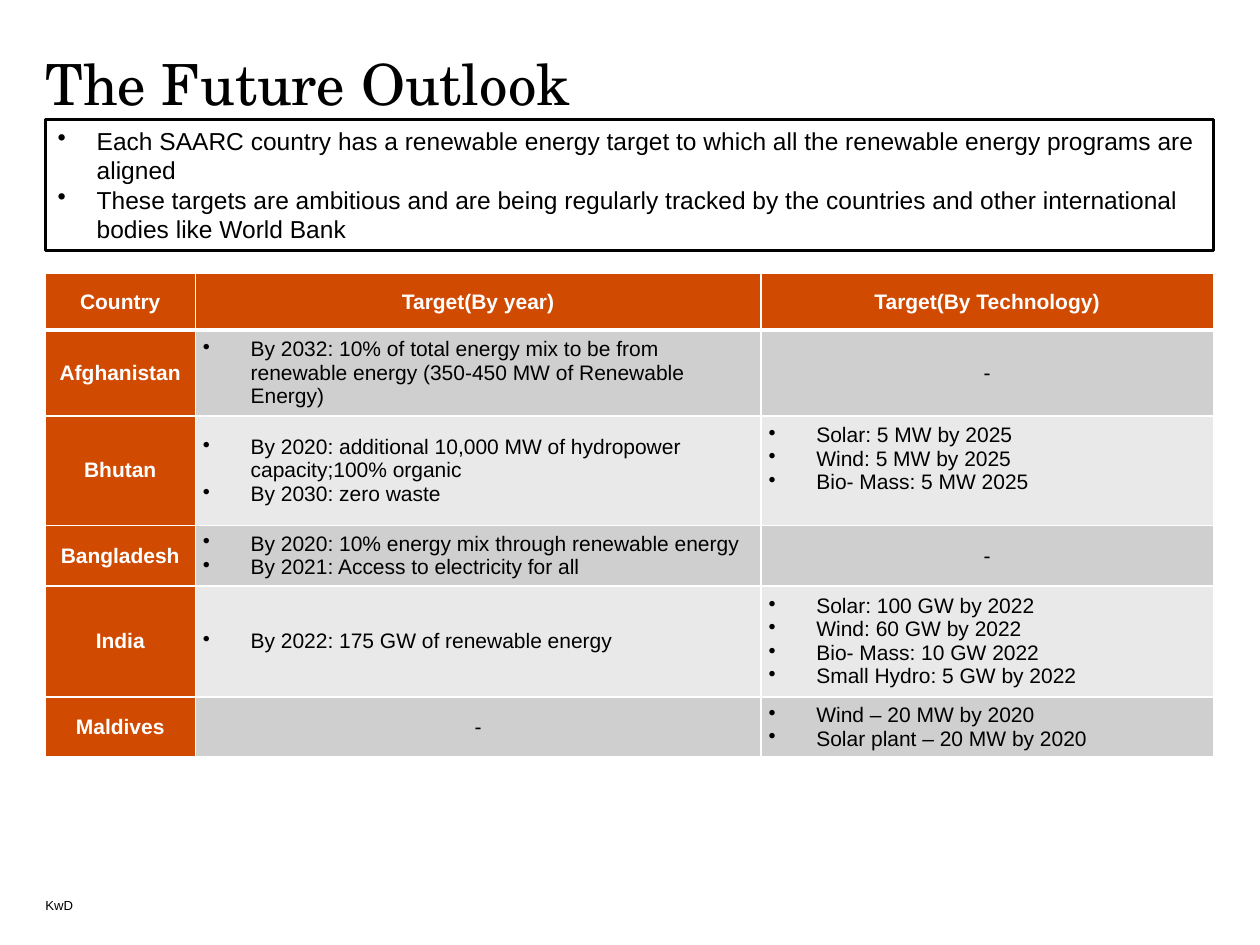
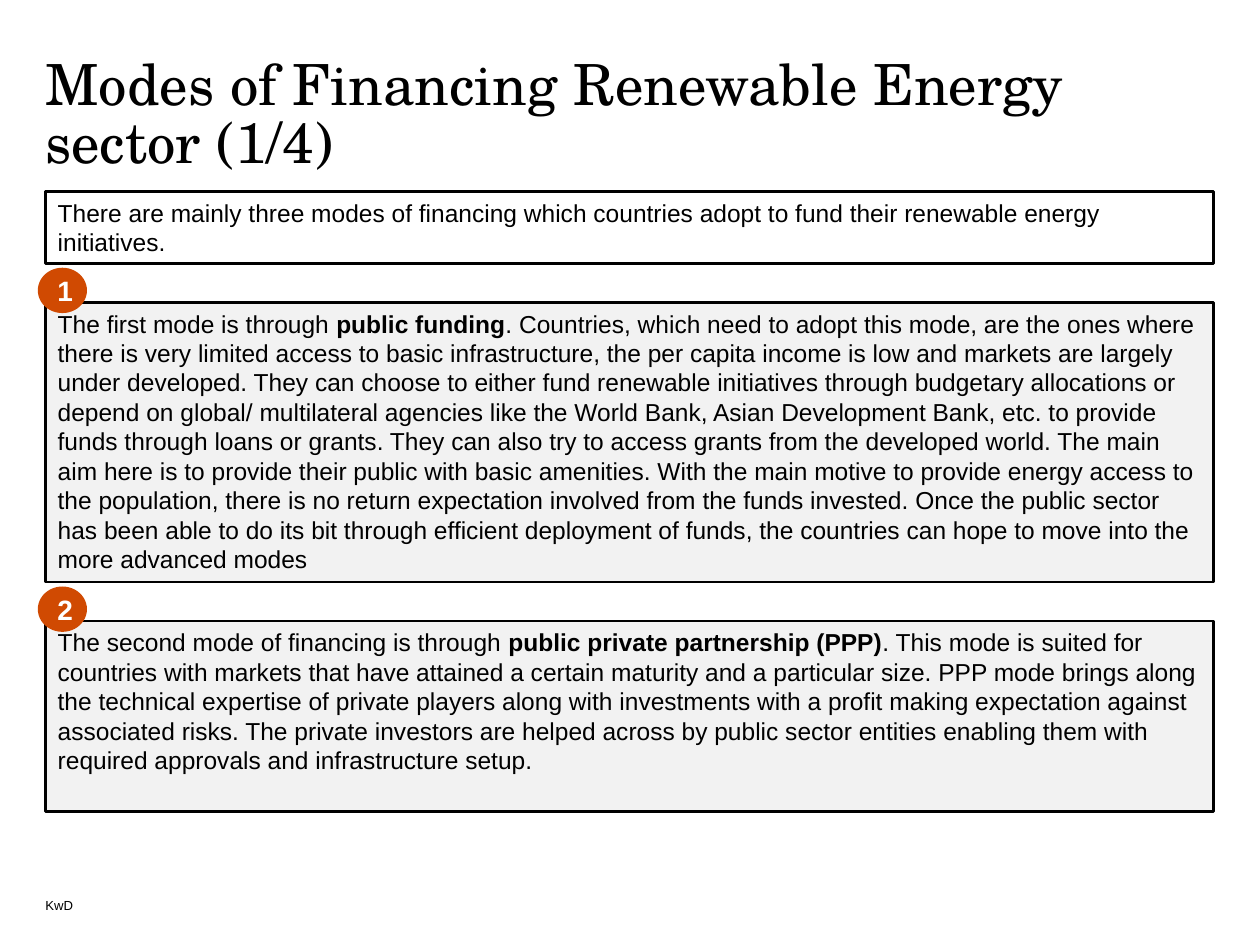
import pptx
import pptx.util
import pptx.dml.color
import pptx.enum.shapes
import pptx.enum.text
import pptx.oxml.ns
import lxml.etree

ORANGE, BLACK, WHITE = "D04A02", "000000", "FFFFFF"
PANEL_GREY, DARK_BAND, LIGHT_BAND = "F2F2F2", "CFCFCF", "E9E9E9"
CENTER = pptx.enum.text.PP_ALIGN.CENTER
LEFT = pptx.enum.text.PP_ALIGN.LEFT
MIDDLE = pptx.enum.text.MSO_ANCHOR.MIDDLE
TOP = pptx.enum.text.MSO_ANCHOR.TOP
BOTTOM = pptx.enum.text.MSO_ANCHOR.BOTTOM
SHAPES = pptx.enum.shapes.MSO_SHAPE

deck = pptx.Presentation()
deck.slide_width = pptx.util.Inches(10)
deck.slide_height = pptx.util.Inches(7.5)
column = deck.slide_width / 100
row = deck.slide_height / 75
margin, content_width = 3.6, 92.7


def paint(color):
    return pptx.dml.color.RGBColor.from_string(color)


def write(frame, lines, size, color=BLACK, font="Arial", bold=False, align=LEFT, hang=0):
    frame.word_wrap = True
    for index, line in enumerate(lines):
        para = frame.paragraphs[0] if index == 0 else frame.add_paragraph()
        para.alignment = align
        if hang:
            properties = para._p.get_or_add_pPr()
            properties.set("marL", str(int(hang * column)))
            properties.set("indent", str(int(-hang * column)))
            bullet = lxml.etree.SubElement(properties, pptx.oxml.ns.qn("a:buChar"))
            bullet.set("char", "•")
        para.font.size = pptx.util.Pt(size)
        para.font.name = font
        para.font.color.rgb = paint(color)
        if bold:
            para.font.bold = True
        for part, words in enumerate(line.split("|")):
            span = para.add_run()
            span.text = words
            if part % 2:
                span.font.bold = True


pages = []
for title in ["The Future Outlook", "Modes of Financing Renewable Energy sector (1/4)"]:
    page = deck.slides.add_slide(deck.slide_layouts[6])
    pages.append(page)
    for text, top, width, height, size, font, anchor in [
        ("KwD", 71, 44.9, 1.5, 7.5, "Arial", BOTTOM),
        (title, 4.7, content_width, 6.8, 32.4, "TeX Gyre Schola", TOP),
    ]:
        box = page.shapes.add_textbox(
            int(margin * column), int(top * row), int(width * column), int(height * row))
        frame = box.text_frame
        frame.margin_left = frame.margin_right = frame.margin_top = frame.margin_bottom = 0
        frame.vertical_anchor = anchor
        write(frame, [text], size, font=font)
    frame.paragraphs[0].line_spacing = 0.85

outlook, financing = pages
targets_intro = [
    "Each SAARC country has a renewable energy target to which all the renewable energy "
    "programs are aligned",
    "These targets are ambitious and are being regularly tracked by the countries and other "
    "international bodies like World Bank",
]
modes_intro = [
    "There are mainly three modes of financing which countries adopt to fund their renewable "
    "energy initiatives."
]
public_funding = [
    "The first mode is through |public funding|. Countries, which need to adopt this mode, are "
    "the ones where there is very limited access to basic infrastructure, the per capita income "
    "is low and markets are largely under developed.",
    "They can choose to either fund renewable initiatives through budgetary allocations or "
    "depend on global/ multilateral agencies like the World Bank, Asian Development Bank, etc. "
    "to provide funds through loans or grants.",
    "They can also try to access grants from the developed world.",
    "The main aim here is to provide their public with basic amenities.",
    "With the main motive to provide energy access to the population, there is no return "
    "expectation involved from the funds invested.",
    "Once the public sector has been able to do its bit through efficient deployment of funds, "
    "the countries can hope to move into the more advanced modes",
]
partnership = [
    "The second mode of financing is through |public private partnership (PPP)|. This mode is "
    "suited for countries with markets that have attained a certain maturity and a particular "
    "size.",
    "PPP mode brings along the technical expertise of private players along with investments "
    "with a profit making expectation against associated risks.",
    "The private investors are helped across by public sector entities enabling them with "
    "required approvals and infrastructure setup.",
]

for page, top, height, lines, hang, number in [
    (outlook, 9.5, 10.4, targets_intro, 3.1, None),
    (financing, 15.2, 5.7, modes_intro, 0, None),
    (financing, 24, 22.2, [" ".join(public_funding)], 0, "1"),
    (financing, 49.3, 15.1, [" ".join(partnership)], 0, "2"),
]:
    panel = page.shapes.add_shape(
        SHAPES.RECTANGLE, int(margin * column), int(top * row),
        int(content_width * column), int(height * row))
    panel.shadow.inherit = False
    panel.line.color.rgb = paint(BLACK)
    panel.line.width = pptx.util.Pt(1.5)
    panel.text_frame.vertical_anchor = TOP
    write(panel.text_frame, lines, 14, hang=hang)
    if number is None:
        panel.fill.background()
        continue
    panel.fill.solid()
    panel.fill.fore_color.rgb = paint(PANEL_GREY)
    badge = page.shapes.add_shape(
        SHAPES.OVAL, int(3 * column), int((top - 2.75) * row), int(3.9 * column), int(3.6 * row))
    badge.shadow.inherit = False
    badge.fill.solid()
    badge.fill.fore_color.rgb = paint(ORANGE)
    badge.line.fill.background()
    badge.text_frame.vertical_anchor = MIDDLE
    write(badge.text_frame, [number], 16, WHITE, bold=True, align=CENTER)

targets = [
    (["Country"], ["Target(By year)"], ["Target(By Technology)"]),
    (["Afghanistan"],
     ["By 2032: 10% of total energy mix to be from renewable energy "
      "(350-450 MW of Renewable Energy)"],
     ["-"]),
    (["Bhutan"],
     ["By 2020: additional 10,000 MW of hydropower capacity;100% organic", "By 2030: zero waste"],
     ["Solar: 5 MW by 2025", "Wind: 5 MW by 2025", "Bio- Mass: 5 MW 2025"]),
    (["Bangladesh"],
     ["By 2020: 10% energy mix through renewable energy", "By 2021: Access to electricity for all"],
     ["-"]),
    (["India"],
     ["By 2022: 175 GW of renewable energy"],
     ["Solar: 100 GW by 2022", "Wind: 60 GW by 2022", "Bio- Mass: 10 GW 2022",
      "Small Hydro: 5 GW by 2022"]),
    (["Maldives"], ["-"], ["Wind – 20 MW by 2020", "Solar plant – 20 MW by 2020"]),
]
column_widths = [11.9, 44.9, 35.9]
row_heights = [4.5, 6.8, 8.7, 4.7, 8.7, 4.7]

table = outlook.shapes.add_table(
    len(row_heights), len(column_widths), int(margin * column), int(21.7 * row),
    int(content_width * column), int(sum(row_heights) * row)).table
table.first_row = table.horz_banding = False
for index, width in enumerate(column_widths):
    table.columns[index].width = int(width * column)

for line, (height, entries) in enumerate(zip(row_heights, targets)):
    table.rows[line].height = int(height * row)
    for place, entry in enumerate(entries):
        cell = table.cell(line, place)
        heading = line == 0 or place == 0
        cell.vertical_anchor = MIDDLE
        cell.margin_left = cell.margin_right = int(0.6 * column)
        cell.margin_top = cell.margin_bottom = int(0.4 * row)
        for side in "LRTB":
            heavy = (line, side) in [(0, "B"), (1, "T")]
            border = lxml.etree.SubElement(
                cell._tc.get_or_add_tcPr(), pptx.oxml.ns.qn("a:ln" + side))
            border.set("w", str(int(pptx.util.Pt(3 if heavy else 1))))
            solid = lxml.etree.SubElement(border, pptx.oxml.ns.qn("a:solidFill"))
            lxml.etree.SubElement(solid, pptx.oxml.ns.qn("a:srgbClr")).set("val", WHITE)
        cell.fill.solid()
        band = DARK_BAND if line % 2 else LIGHT_BAND
        cell.fill.fore_color.rgb = paint(ORANGE if heading else band)
        centered = heading or entry == ["-"]
        write(cell.text_frame, entry, 12, WHITE if heading else BLACK, bold=heading,
              align=CENTER if centered else LEFT, hang=0 if centered else 3.8)
table.cell(2, 2).margin_bottom = int(2.3 * row)

deck.save("out.pptx")
